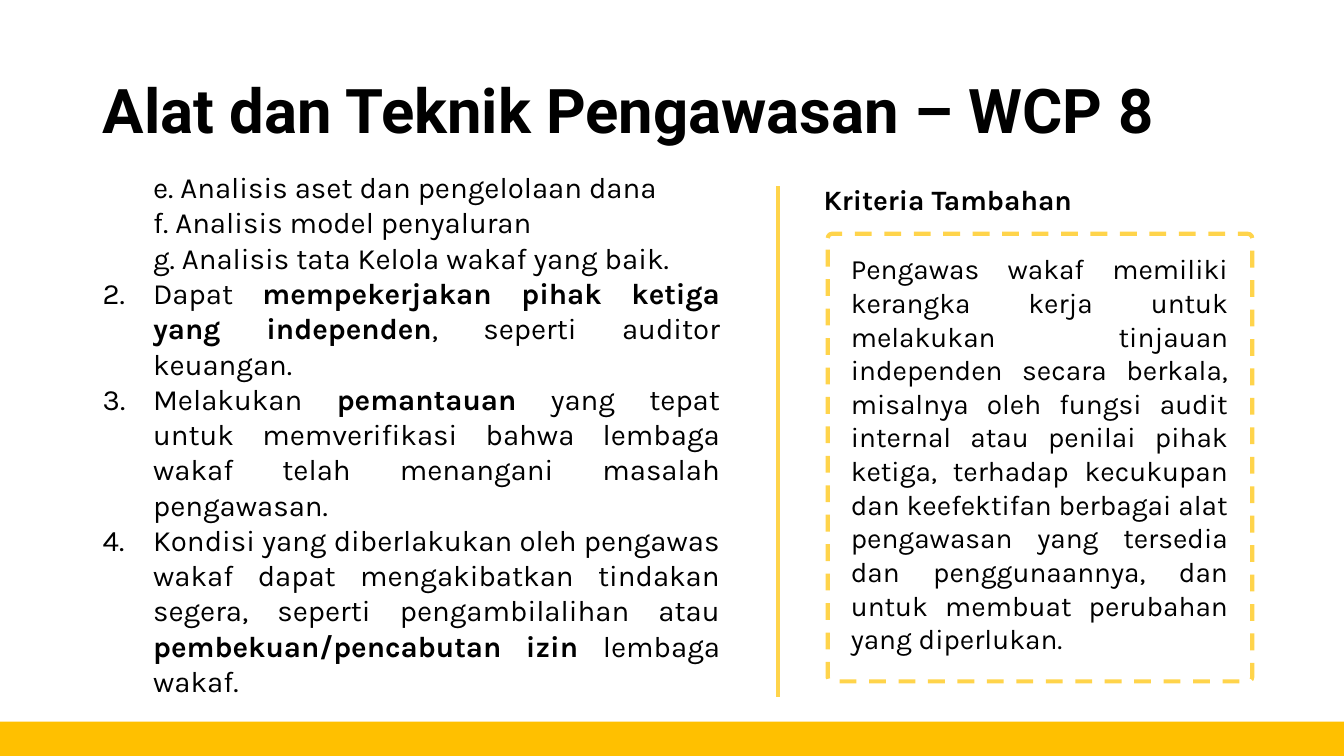
from lxml.etree import SubElement
from pptx import Presentation
from pptx.dml.color import RGBColor
from pptx.enum.dml import MSO_LINE
from pptx.enum.shapes import MSO_CONNECTOR, MSO_SHAPE
from pptx.enum.text import MSO_ANCHOR, PP_ALIGN
from pptx.oxml.ns import qn
from pptx.util import Pt

EMU_PER_PX = 9144  # 100 px to the inch
BLACK, AMBER, YELLOW = "000000", "FFC000", "FFD44B"
INDENT = 50

# Text between ** marks is bold.
SUB_ITEMS = [
    "e. Analisis aset dan pengelolaan dana",
    "f. Analisis model penyaluran",
    "g. Analisis tata Kelola wakaf yang baik.",
]
NUMBERED_ITEMS = [
    "Dapat **mempekerjakan pihak ketiga yang independen**, seperti auditor keuangan.",
    "Melakukan **pemantauan** yang tepat untuk memverifikasi bahwa lembaga wakaf "
    "telah menangani masalah pengawasan.",
    "Kondisi yang diberlakukan oleh pengawas wakaf dapat mengakibatkan tindakan segera, "
    "seperti pengambilalihan atau **pembekuan/pencabutan izin **lembaga wakaf.",
]
CRITERION = (
    "Pengawas wakaf memiliki kerangka kerja untuk melakukan tinjauan independen secara "
    "berkala, misalnya oleh fungsi audit internal atau penilai pihak ketiga, terhadap "
    "kecukupan dan keefektifan berbagai alat pengawasan yang tersedia dan penggunaannya, "
    "dan untuk membuat perubahan yang diperlukan."
)


def px(*lengths):
    return [round(length * EMU_PER_PX) for length in lengths]


def color(hex_code):
    return RGBColor.from_string(hex_code)


def style_span(span, font, size, bold):
    span.font.name = font
    span.font.size = Pt(size)
    span.font.bold = bold
    span.font.color.rgb = color(BLACK)


def add_title(page, text):
    title = page.shapes.title
    title.left, title.top, title.width, title.height = px(92, 40, 1150, 145)
    frame = title.text_frame
    frame.text = text
    frame.vertical_anchor = MSO_ANCHOR.MIDDLE
    para = frame.paragraphs[0]
    para.alignment = PP_ALIGN.LEFT
    para.line_spacing = 0.9
    style_span(para.runs[0], "Roboto", 44, True)


def indent(para, first_line, start=None):
    """Indent a paragraph, and number it when a start is given."""
    properties = para._p.get_or_add_pPr()
    left, hanging = px(INDENT, first_line)
    properties.set("marL", str(left))
    properties.set("indent", str(hanging))
    if start:
        SubElement(properties, qn("a:buFont"), typeface="+mj-lt")
        SubElement(properties, qn("a:buAutoNum"), type="arabicPeriod", startAt=str(start))


def add_text(page, bounds, texts, size):
    """Add justified paragraphs and return them."""
    box = page.shapes.add_textbox(*px(*bounds))
    frame = box.text_frame
    frame.word_wrap = True
    for index, text in enumerate(texts):
        para = frame.paragraphs[0] if index == 0 else frame.add_paragraph()
        para.alignment = PP_ALIGN.JUSTIFY
        for part, words in enumerate(text.split("**")):
            span = para.add_run()
            span.text = words
            style_span(span, "Karla", size, part % 2 == 1)
    return frame.paragraphs


def add_footer_band(page):
    band = page.shapes.add_shape(MSO_SHAPE.RECTANGLE, *px(0, 716, 1333, 34))
    band.shadow.inherit = False
    band.fill.solid()
    band.fill.fore_color.rgb = color(AMBER)
    band.line.fill.background()


def style_line(line):
    line.color.rgb = color(YELLOW)
    line.width = Pt(3)


def add_dashed_frame(page):
    frame = page.shapes.add_shape(MSO_SHAPE.ROUNDED_RECTANGLE, *px(821, 232, 421, 444))
    frame.adjustments[0] = 0.01
    frame.shadow.inherit = False
    frame.fill.background()
    style_line(frame.line)
    frame.line.dash_style = MSO_LINE.DASH


def add_divider(page):
    divider = page.shapes.add_connector(MSO_CONNECTOR.STRAIGHT, *px(772, 185, 772, 691))
    style_line(divider.line)
    SubElement(divider._element.spPr, qn("a:effectLst"))


def main():
    deck = Presentation()
    deck.slide_width, deck.slide_height = px(1333, 750)
    page = deck.slides.add_slide(deck.slide_layouts[5])
    add_footer_band(page)
    add_title(page, "Alat dan Teknik Pengawasan – WCP 8")
    paras = add_text(page, (92, 163, 632, 540), SUB_ITEMS + NUMBERED_ITEMS, 21)
    for para in paras[:len(SUB_ITEMS)]:
        para.level = 1
        indent(para, 0)
    for para in paras[len(SUB_ITEMS):]:
        indent(para, -INDENT, start=2)
    add_text(page, (834, 245, 394, 414), [CRITERION], 20)
    add_dashed_frame(page)
    add_text(page, (807, 176, 394, 44), ["**Kriteria Tambahan**"], 20)
    add_divider(page)
    deck.save("out.pptx")


if __name__ == "__main__":
    main()
